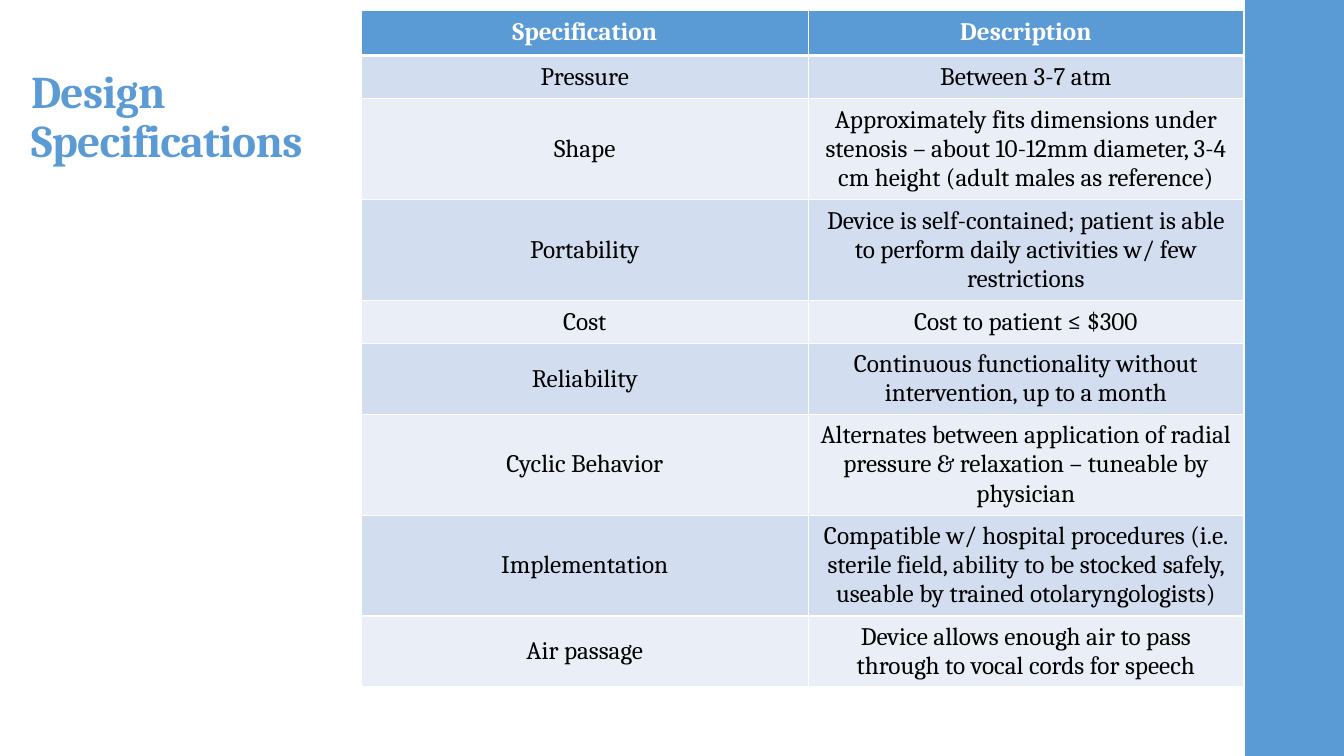
from lxml import etree
from pptx import Presentation, util as u
from pptx.dml.color import RGBColor
from pptx.enum import shapes, text
from pptx.oxml import ns

BLUE = RGBColor(0x5B, 0x9B, 0xD5)
PALE = RGBColor(0xD2, 0xDE, 0xEF)
MIST = RGBColor(0xEA, 0xEF, 0xF7)
WHITE = RGBColor(0xFF, 0xFF, 0xFF)
BLACK = RGBColor(0, 0, 0)

ROWS = [
    ("Specification", "Description"),
    ("Pressure", "Between 3-7 atm"),
    ("Shape", "Approximately fits dimensions under stenosis – about 10-12mm "
              "diameter, 3-4 cm height (adult males as reference)"),
    ("Portability", "Device is self-contained; patient is able to perform "
                    "daily activities w/ few restrictions"),
    ("Cost", "Cost to patient ≤ $300"),
    ("Reliability", "Continuous functionality without intervention, up to a month"),
    ("Cyclic Behavior", "Alternates between application of radial pressure & "
                        "relaxation – tuneable by physician"),
    ("Implementation", "Compatible w/ hospital procedures (i.e. sterile field, "
                       "ability to be stocked safely, useable by trained "
                       "otolaryngologists)"),
    ("Air passage", "Device allows enough air to pass through to vocal cords for speech"),
]


class Deck:
    """Holds the font and the current slide, and draws each kind of element."""

    font = "Cambria"

    def __init__(self, slide):
        self.slide = slide

    def apply(self, item, form):
        for key, value in form.items():
            setattr(item, key, value)

    def label(self, para, words, size, color, bold):
        run = para.add_run()
        run.text = words
        self.apply(run.font, {"name": self.font, "size": u.Pt(size), "bold": bold})
        run.font.color.rgb = color
        return run

    def band(self, box, color):
        rect = self.slide.shapes.add_shape(
            shapes.MSO_SHAPE.RECTANGLE, *map(u.Inches, box))
        rect.shadow.inherit = False
        rect.fill.solid()
        rect.fill.fore_color.rgb = color
        rect.line.fill.background()

    def title(self, box, words):
        frame = self.slide.shapes.add_textbox(*map(u.Inches, box)).text_frame
        self.apply(frame, {
            "word_wrap": True,
            "vertical_anchor": text.MSO_ANCHOR.BOTTOM,
            "margin_top": u.Inches(0.03),
            "margin_bottom": u.Inches(0.05),
        })
        para = frame.paragraphs[0]
        para.line_spacing = 0.9
        run = self.label(para, words, 32.4, BLUE, True)
        run._r.get_or_add_rPr().set("spc", "-50")

    def border(self, cell, base):
        props = cell._tc.get_or_add_tcPr()
        for side, width in (("L", 1), ("R", 1), ("T", 1), ("B", base)):
            line = etree.SubElement(props, ns.qn("a:ln" + side), w=str(u.Pt(width)))
            fill = etree.SubElement(line, ns.qn("a:solidFill"))
            etree.SubElement(fill, ns.qn("a:srgbClr"), val=str(WHITE))

    def cell(self, cell, words, back, color, head):
        self.border(cell, 3 if head else 1)
        cell.fill.solid()
        cell.fill.fore_color.rgb = back
        cell.vertical_anchor = text.MSO_ANCHOR.MIDDLE
        para = cell.text_frame.paragraphs[0]
        para.alignment = text.PP_ALIGN.CENTER
        self.label(para, words, 18, color, head)

    def table(self, left, top, widths, heights, rows):
        box = (left, top, sum(widths), sum(heights))
        grid = self.slide.shapes.add_table(
            len(rows), len(widths), *map(u.Inches, box)).table
        for col, width in zip(grid.columns, widths):
            col.width = u.Inches(width)
        for i, row in enumerate(rows):
            grid.rows[i].height = u.Inches(heights[i])
            head = i == 0
            back = BLUE if head else (MIST, PALE)[i % 2]
            for j, words in enumerate(row):
                self.cell(grid.cell(i, j), words, back, WHITE if head else BLACK, head)


def main():
    show = Presentation()
    show.slide_width, show.slide_height = u.Inches(13.33), u.Inches(7.5)
    deck = Deck(show.slides.add_slide(show.slide_layouts[6]))
    deck.band((12.35, 0, 0.98, 7.5), BLUE)
    deck.title((0.21, 0.1, 3.58, 1.61), "Design Specifications")
    deck.table(3.58, 0.1, (4.44, 4.31), [0.45] + [0.43] * (len(ROWS) - 1), ROWS)
    show.save("out.pptx")


if __name__ == "__main__":
    main()
